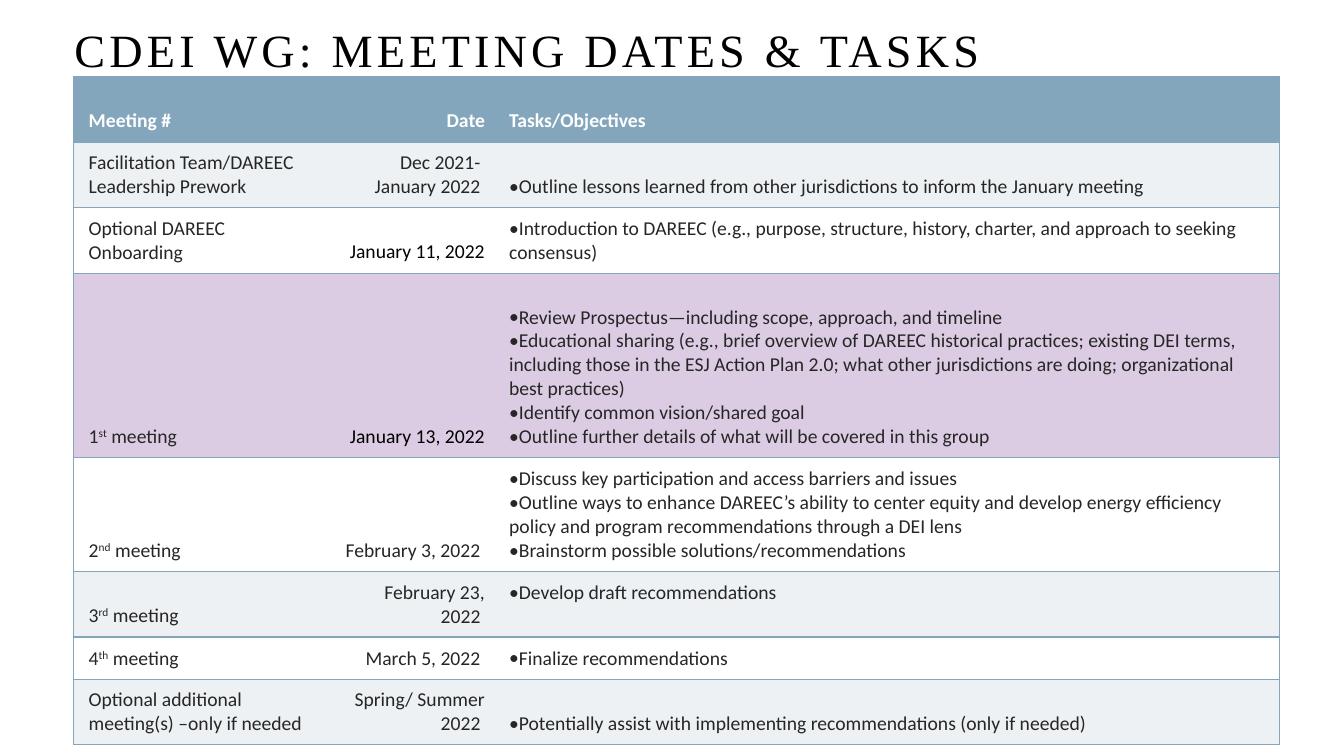
from lxml import etree
from pptx import Presentation
from pptx.dml.color import RGBColor
from pptx.enum import text as t
from pptx.oxml.ns import qn
from pptx.util import Inches, Pt

THEME = {
    "title_font": "Times New Roman", "body_font": "Calibri",
    "title_size": 33, "body_size": 14,
    "black": "000000", "body": "262626", "white": "FFFFFF",
    "blue": "83A6BC", "pale": "EDF1F3", "lilac": "DBCCE3",
}
COLUMN_WIDTHS = [2.54, 1.63, 7.79]
ALIGNMENTS = [t.PP_ALIGN.LEFT, t.PP_ALIGN.RIGHT, t.PP_ALIGN.LEFT]
MARGINS = {"margin_left": 0.15, "margin_right": 0.09, "margin_top": 0.09, "margin_bottom": 0.09}

ROWS = [
    (0.65, "blue", "Meeting #", ["Date"], ["Tasks/Objectives"]),
    (0.65, "pale", "Facilitation Team/DAREEC Leadership Prework",
     ["Dec 2021- ", "January 2022 "],
     ["Outline lessons learned from other jurisdictions to inform the January meeting"]),
    (0.65, "white", "Optional DAREEC Onboarding", ["January 11, 2022"],
     ["Introduction to DAREEC (e.g., purpose, structure, history, charter, and approach to seeking consensus)"]),
    (1.83, "lilac", "1^st^ meeting", ["January 13, 2022"],
     ["Review Prospectus—including scope, approach, and timeline",
      "Educational sharing (e.g., brief overview of DAREEC historical practices; existing DEI terms, "
      "including those in the ESJ Action Plan 2.0; what other jurisdictions are doing; "
      "organizational best practices)",
      "Identify common vision/shared goal",
      "Outline further details of what will be covered in this group"]),
    (1.13, "white", "2^nd^ meeting", ["February 3, 2022 "],
     ["Discuss key participation and access barriers and issues",
      "Outline ways to enhance DAREEC’s ability to center equity and develop energy efficiency policy "
      "and program recommendations through a DEI lens",
      "Brainstorm possible solutions/recommendations"]),
    (0.65, "pale", "3^rd^ meeting", ["February 23, 2022 "], ["Develop draft recommendations"]),
    (0.42, "white", "4^th^ meeting", ["March 5, 2022 "], ["Finalize recommendations"]),
    (0.65, "pale", "Optional additional meeting(s) –only if needed", ["Spring/ Summer 2022 "],
     ["Potentially assist with implementing recommendations (only if needed)"]),
]


def add_text(p, words, font, size, color, bold=False):
    for i, part in enumerate(words.split("^")):
        r = p.add_run()
        r.text = part
        for name, value in {"name": font, "size": Pt(size), "bold": bold}.items():
            setattr(r.font, name, value)
        r.font.color.rgb = RGBColor.from_string(color)
        if i % 2:
            r.font._element.set("baseline", "30000")


def add_border(cell, side, color):
    ln = etree.SubElement(cell._tc.get_or_add_tcPr(), qn(f"a:ln{side}"), w=str(Pt(1)))
    if color:
        fill = etree.SubElement(ln, qn("a:solidFill"))
        etree.SubElement(fill, qn("a:srgbClr"), val=color)
    else:
        etree.SubElement(ln, qn("a:noFill"))


prs = Presentation()
prs.slide_width, prs.slide_height = Inches(13.33), Inches(7.5)
s = prs.slides.add_slide(prs.slide_layouts[6])

title = s.shapes.add_textbox(Inches(0.64), Inches(0), Inches(11.63), Inches(1.04))
tf = title.text_frame
tf.word_wrap = True
tf.vertical_anchor = t.MSO_ANCHOR.MIDDLE
p = tf.paragraphs[0]
p.line_spacing = 0.9
add_text(p, "CDEI WG: MEETING DATES & TASKS", THEME["title_font"], THEME["title_size"], THEME["black"])
p.runs[0].font._element.set("spc", "300")

table = s.shapes.add_table(len(ROWS), len(COLUMN_WIDTHS), Inches(0.73), Inches(0.76),
                           Inches(sum(COLUMN_WIDTHS)), Inches(sum(row[0] for row in ROWS))).table
table.horz_banding = False
for column, width in zip(table.columns, COLUMN_WIDTHS):
    column.width = Inches(width)

for i, (height, fill, meeting, dates, tasks) in enumerate(ROWS):
    table.rows[i].height = Inches(height)
    for j, lines in enumerate([[meeting], dates, tasks]):
        cell = table.cell(i, j)
        for name, value in MARGINS.items():
            setattr(cell, name, Inches(value))
        top_aligned = j == 2 and meeting.startswith("3^")
        cell.vertical_anchor = t.MSO_ANCHOR.TOP if top_aligned else t.MSO_ANCHOR.BOTTOM
        for side, shown in {"L": j == 0, "R": j == 2, "T": True, "B": True}.items():
            add_border(cell, side, THEME["blue"] if shown else None)
        cell.fill.solid()
        cell.fill.fore_color.rgb = RGBColor.from_string(THEME[fill])

        color = "white" if i == 0 else "black" if j == 1 and i in (2, 3) else "body"
        tf = cell.text_frame
        for k, line in enumerate(lines):
            p = tf.add_paragraph() if k else tf.paragraphs[0]
            p.alignment = ALIGNMENTS[j]
            if i and j == 2:
                pPr = p._p.get_or_add_pPr()
                pPr.set("marL", "0")
                pPr.set("indent", "0")
                etree.SubElement(pPr, qn("a:buFont"), typeface=THEME["body_font"])
                etree.SubElement(pPr, qn("a:buChar"), char="•")
            add_text(p, line, THEME["body_font"], THEME["body_size"], THEME[color], i == 0)

prs.save("out.pptx")
